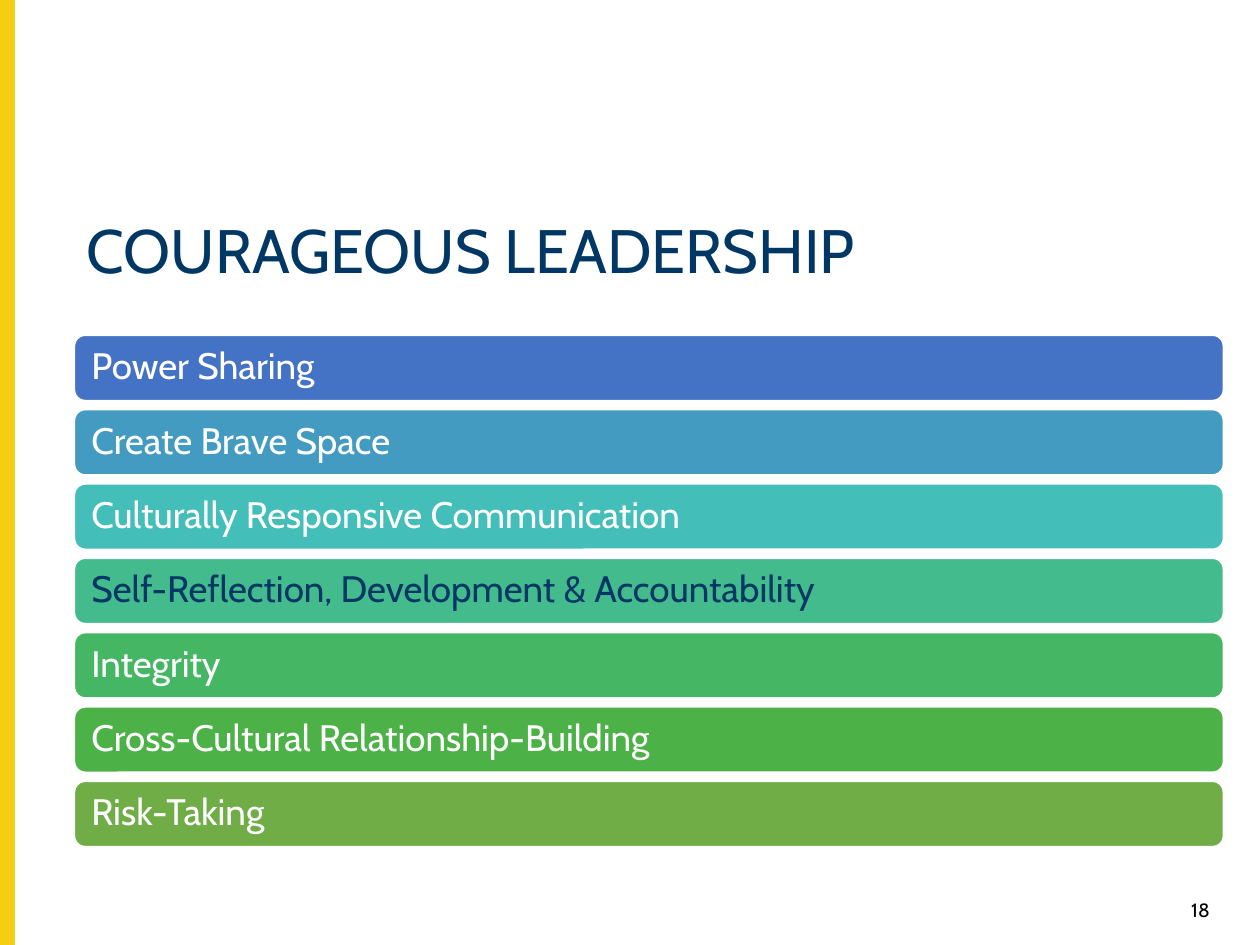
from dataclasses import dataclass

from pptx import Presentation
from pptx.dml.color import RGBColor
from pptx.enum.shapes import MSO_SHAPE
from pptx.enum.text import MSO_ANCHOR, PP_ALIGN
from pptx.util import Inches, Pt

RECTANGLE = MSO_SHAPE.RECTANGLE
ROUNDED = MSO_SHAPE.ROUNDED_RECTANGLE
TOP, MIDDLE = MSO_ANCHOR.TOP, MSO_ANCHOR.MIDDLE
LEFT, RIGHT = PP_ALIGN.LEFT, PP_ALIGN.RIGHT
TITLE_ONLY = 5


@dataclass(frozen=True)
class Theme:
    font: str = "Cabin"
    navy: str = "003764"
    yellow: str = "F4CE12"
    white: str = "FFFFFF"
    black: str = "000000"
    title_size: int = 35
    bar_size: int = 21
    number_size: int = 11


@dataclass(frozen=True)
class Box:
    """A region in inches."""
    left: float
    top: float
    width: float
    height: float

    def emu(self):
        return [Inches(v) for v in (self.left, self.top, self.width, self.height)]


THEME = Theme()
WIDTH, HEIGHT = 10, 7.5
MARGIN, CONTENT_WIDTH = 0.59, 9.12
BAR_SHARE = 0.52 / 0.59  # part of each row that the bar fills

PRINCIPLES = [
    ("Power Sharing", "4472C4", THEME.white),
    ("Create Brave Space", "449BC1", THEME.white),
    ("Culturally Responsive Communication", "43BEB9", THEME.white),
    ("Self-Reflection, Development & Accountability", "43BB8D", THEME.navy),
    ("Integrity", "45B664", THEME.white),
    ("Cross-Cultural Relationship-Building", "4CB146", THEME.white),
    ("Risk-Taking", "70AD47", THEME.white),
]


def write_text(shape, text, size, color, anchor=MIDDLE, alignment=LEFT, spacing=0.9):
    frame = shape.text_frame
    frame.word_wrap = True
    frame.vertical_anchor = anchor
    frame.text = text
    paragraph = frame.paragraphs[0]
    paragraph.alignment = alignment
    paragraph.line_spacing = spacing
    paragraph.font.name = THEME.font
    paragraph.font.size = Pt(size)
    paragraph.font.color.rgb = RGBColor.from_string(color)


def add_block(slide, kind, box, fill, line):
    shape = slide.shapes.add_shape(kind, *box.emu())
    shape.shadow.inherit = False
    shape.fill.solid()
    shape.fill.fore_color.rgb = RGBColor.from_string(fill)
    shape.line.color.rgb = RGBColor.from_string(line)
    shape.line.width = Pt(1)
    return shape


def place_title(slide, box, text):
    title = slide.shapes.title
    title.left, title.top, title.width, title.height = box.emu()
    write_text(title, text, THEME.title_size, THEME.navy, anchor=TOP)


def add_principles(slide, box, principles):
    row = box.height / len(principles)
    for index, (text, fill, color) in enumerate(principles):
        bar_box = Box(box.left, box.top + index * row, box.width, row * BAR_SHARE)
        bar = add_block(slide, ROUNDED, bar_box, fill, THEME.white)
        bar.text_frame.margin_left = Inches(0.11)
        write_text(bar, text, THEME.bar_size, color)


def add_page_number(slide, box, number):
    text_box = slide.shapes.add_textbox(*box.emu())
    write_text(text_box, str(number), THEME.number_size, THEME.black,
               alignment=RIGHT, spacing=1.0)


def main():
    presentation = Presentation()
    presentation.slide_width, presentation.slide_height = Inches(WIDTH), Inches(HEIGHT)
    slide = presentation.slides.add_slide(presentation.slide_layouts[TITLE_ONLY])
    add_block(slide, RECTANGLE, Box(0, 0, 0.11, HEIGHT), THEME.yellow, THEME.yellow)
    place_title(slide, Box(MARGIN, 1.7, CONTENT_WIDTH, 0.87), "COURAGEOUS LEADERSHIP")
    add_principles(slide, Box(MARGIN, 2.66, CONTENT_WIDTH, 4.13), PRINCIPLES)
    add_page_number(slide, Box(9.19, 7.09, 0.51, 0.26), 18)
    presentation.save("out.pptx")


if __name__ == "__main__":
    main()
